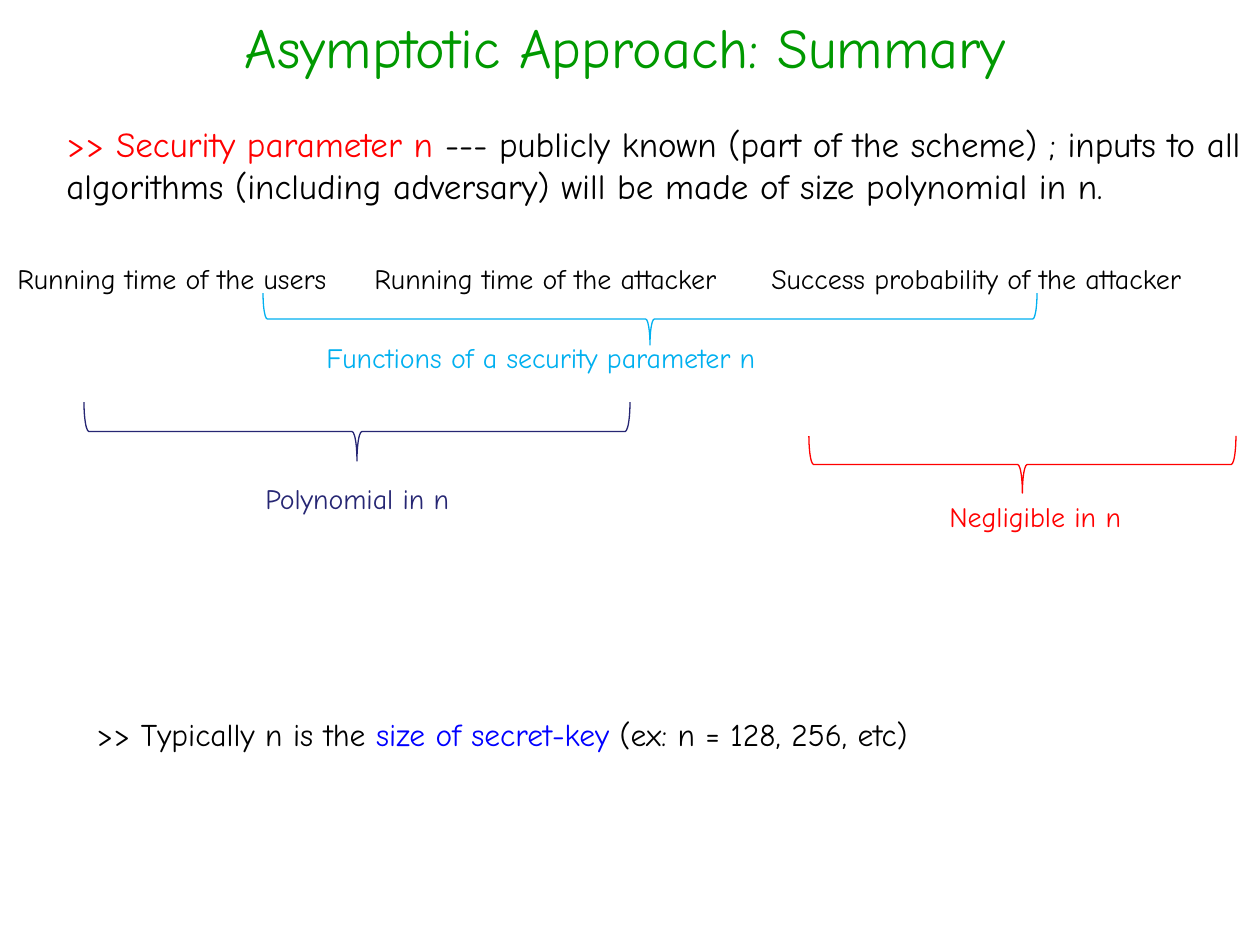
from dataclasses import dataclass

from pptx import Presentation
from pptx import util as u
from pptx.dml.color import RGBColor
from pptx.enum import shapes, text

EMU_PER_PX = 914400 / 126
FONT = "Comic Neue"
COLORS = {
    "green": "009900",
    "red": "FF0000",
    "black": "000000",
    "cyan": "00B0F0",
    "navy": "262673",
    "blue": "0000FF",
}


@dataclass
class Box:
    left: int
    top: int
    width: int
    height: int


@dataclass
class Note:
    box: Box
    size: int
    runs: list[tuple[str, str]]


@dataclass
class Brace:
    """A downward brace, given by the area it covers once turned."""
    box: Box
    color: str


def px(length: float) -> u.Emu:
    return u.Emu(round(length * EMU_PER_PX))


def rgb(name: str) -> RGBColor:
    return RGBColor.from_string(COLORS[name])


def place(shape, box: Box) -> None:
    for side in ("left", "top", "width", "height"):
        setattr(shape, side, px(getattr(box, side)))


def write(frame, size: int, runs: list[tuple[str, str]], frame_format: dict) -> None:
    for name, value in frame_format.items():
        setattr(frame, name, value)
    for words, color in runs:
        run = frame.paragraphs[0].add_run()
        run.text = words
        for name, value in {"name": FONT, "size": u.Pt(size)}.items():
            setattr(run.font, name, value)
        run.font.color.rgb = rgb(color)


def add_note(slide, note: Note) -> None:
    textbox = slide.shapes.add_textbox(0, 0, 0, 0)
    place(textbox, note.box)
    write(textbox.text_frame, note.size, note.runs, {
        "word_wrap": True,
        "auto_size": text.MSO_AUTO_SIZE.SHAPE_TO_FIT_TEXT,
    })


def add_brace(slide, brace: Brace) -> None:
    box = brace.box
    shift = (box.width - box.height) / 2
    turned = slide.shapes.add_shape(
        shapes.MSO_SHAPE.LEFT_BRACE,
        px(box.left + shift), px(box.top - shift), px(box.height), px(box.width))
    turned.rotation = 270
    turned.shadow.inherit = False
    turned.fill.background()
    turned.line.color.rgb = rgb(brace.color)
    turned.line.width = u.Pt(0.75)


# Content, from top to bottom
PARAMETER = Note(Box(54, 116, 1206, 97), 20, [
    (">> Security parameter n ", "red"),
    ("--- publicly known (part of the scheme) ; inputs to all algorithms "
     "(including adversary) will be made of size polynomial in n.", "black"),
])
MEASURES = [
    Note(Box(left, 255, width, 47), 16, [(words, "black")])
    for left, width, words in [
        (5, 367, "Running time of the users"),
        (362, 407, "Running time of the attacker"),
        (759, 515, "Success probability of the attacker"),
    ]
]
GROUPS = [
    (Brace(Box(263, 293, 774, 52), "cyan"), Box(314, 334, 674, 47),
     "Functions of a security parameter n"),
    (Brace(Box(84, 402, 546, 59), "navy"), Box(253, 475, 228, 47),
     "Polynomial in n"),
    (Brace(Box(809, 436, 427, 57), "red"), Box(937, 493, 228, 47),
     "Negligible in n"),
]
KEY_SIZE = Note(Box(84, 709, 893, 50), 18, [
    (">> Typically n is the ", "black"),
    ("size of secret-key ", "blue"),
    ("(ex: n = 128, 256, etc)", "black"),
])


def main() -> None:
    deck = Presentation()
    deck.slide_width, deck.slide_height = px(1260), px(945)
    slide = deck.slides.add_slide(deck.slide_layouts[5])

    # Title
    title = slide.shapes.title
    place(title, Box(25, 6, 1201, 66))
    write(title.text_frame, 32, [("Asymptotic Approach: Summary", "green")], {
        "word_wrap": True,
        "auto_size": text.MSO_AUTO_SIZE.NONE,
        "vertical_anchor": text.MSO_ANCHOR.TOP,
    })
    title.text_frame.paragraphs[0].alignment = text.PP_ALIGN.CENTER

    # Statement and the three measures
    for note in [PARAMETER, *MEASURES]:
        add_note(slide, note)

    # Braces with their captions
    for brace, caption_box, caption in GROUPS:
        add_brace(slide, brace)
        add_note(slide, Note(caption_box, 16, [(caption, brace.color)]))

    # Closing remark
    add_note(slide, KEY_SIZE)

    deck.save("out.pptx")


if __name__ == "__main__":
    main()
